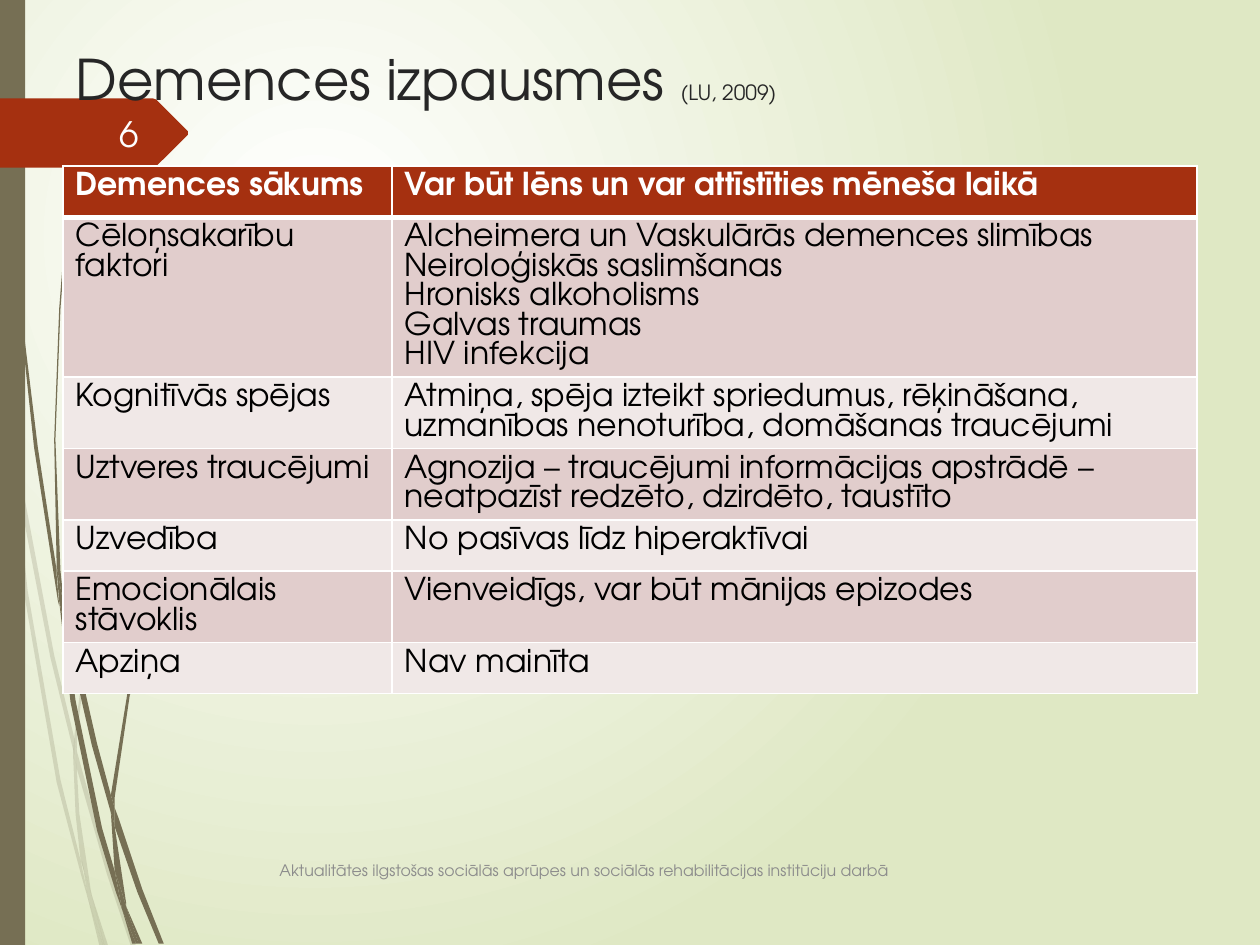
import pptx
import pptx.util
import pptx.oxml
from pptx.dml.color import RGBColor
from pptx.enum.text import MSO_ANCHOR, PP_ALIGN
from pptx.oxml.ns import qn
from lxml import etree

Pt = pptx.util.Pt
FONT = "TeX Gyre Adventor"
COLORS = {
    "white": "FFFFFF", "meadow": "DFE8C4", "olive": "766F54", "rust": "A53010",
    "title": "262626", "black": "000000", "rose": "E1CDCC", "blush": "F0E8E7",
    "footer": "8C8C8C", "number": "FEFFFF",
}
TITLE = [("Demences izpausmes ", 32), ("(LU, 2009)", 12)]
FOOTER = "Aktualitātes ilgstošas sociālās aprūpes un sociālās rehabilitācijas institūciju darbā"
ROWS = [
    ("Demences sākums", "Var būt lēns un var attīstīties mēneša laikā"),
    ("Cēloņsakarību faktori",
     "Alcheimera un Vaskulārās demences slimības\nNeiroloģiskās saslimšanas\n"
     "Hronisks alkoholisms\nGalvas traumas\nHIV infekcija"),
    ("Kognitīvās spējas",
     "Atmiņa, spēja izteikt spriedumus, rēķināšana, uzmanības nenoturība, domāšanas traucējumi"),
    ("Uztveres traucējumi",
     "Agnozija – traucējumi informācijas apstrādē – neatpazīst redzēto, dzirdēto, taustīto"),
    ("Uzvedība", "No pasīvas līdz hiperaktīvai"),
    ("Emocionālais stāvoklis", "Vienveidīgs, var būt mānijas epizodes"),
    ("Apziņa", "Nav mainīta"),
]
COLUMN_WIDTHS = [188, 460]
ROW_HEIGHT = 29.2

GRID = Pt(0.72)
PALE_GRASS = [
    [(8, 350), (6, 322), (0, 282), (0, 299), (7, 344)],
    [(40, 522), (59, 599), (59, 586), (43, 520), (10, 345), (12, 376)],
    [(64, 607), (61, 596), (61, 610), (85, 694), (104, 751), (108, 751), (88, 692)],
    [(83, 751), (86, 751), (73, 711)],
    [(64, 683), (48, 619), (22, 469), (12, 376), (8, 350), (19, 470), (45, 621),
     (64, 693), (70, 714), (69, 707)],
    [(58, 599), (60, 646), (64, 683), (67, 692), (73, 711), (72, 706), (63, 646),
     (61, 610), (61, 608)],
    [(61, 584), (76, 462), (111, 349), (159, 245), (187, 198), (201, 175), (217, 154),
     (217, 153), (201, 175), (186, 197), (158, 244), (110, 348), (75, 461), (59, 584),
     (59, 586), (61, 596)],
    [(70, 714), (79, 751), (82, 751)],
    [(61, 608), (61, 610), (61, 596), (59, 586), (58, 599)],
    [(67, 692), (65, 683), (69, 707), (70, 714), (82, 751), (83, 751), (73, 711)],
]
DARK_GRASS = [
    [(5, 110), (14, 233), (27, 355), (46, 477), (47, 481), (45, 457), (45, 453),
     (30, 355), (15, 232), (6, 109), (4, 48), (3, 0), (2, 0), (3, 48)],
    [(73, 592), (88, 645), (88, 633), (88, 631), (77, 590), (50, 472), (53, 505)],
    [(94, 649), (91, 641), (91, 656), (109, 708), (126, 749), (130, 749), (113, 706)],
    [(91, 691), (81, 657), (60, 556), (53, 505), (47, 477), (56, 557), (77, 659),
     (92, 708), (97, 722), (96, 717)],
    [(50, 472), (48, 453), (44, 349), (48, 245), (52, 193), (58, 141), (51, 193),
     (47, 245), (43, 349), (45, 449), (49, 472)],
    [(110, 749), (113, 749), (100, 719)],
    [(47, 477), (53, 505), (50, 472), (49, 472), (45, 449), (45, 453)],
    [(91, 633), (103, 552), (131, 476), (169, 406), (191, 374), (203, 359), (216, 344),
     (215, 344), (203, 358), (191, 373), (168, 405), (129, 474), (101, 551), (88, 631),
     (91, 641)],
    [(97, 722), (105, 749), (108, 749)],
    [(88, 645), (91, 691), (96, 706), (100, 719), (100, 716), (91, 656), (90, 651)],
    [(88, 645), (90, 651), (91, 656), (91, 641), (88, 631), (88, 633)],
    [(96, 706), (91, 691), (96, 717), (97, 722), (108, 749), (110, 749), (100, 719)],
]
NUMBER_TAG = [(149, 107), (124, 132), (121, 133), (0, 133), (0, 78), (121, 78),
              (124, 79), (149, 104)]


def rgb(name):
    return RGBColor.from_string(COLORS[name])


def place(shape, left, top, width, height):
    shape.left, shape.top, shape.width, shape.height = map(Pt, (left, top, width, height))


def style_text(text_frame, size, color, bold=False):
    for paragraph in text_frame.paragraphs:
        for run in paragraph.runs:
            run.font.name = FONT
            run.font.size = Pt(size)
            run.font.bold = bold
            run.font.color.rgb = rgb(color)


def paint(shape, color, opacity=100):
    shape.shadow.inherit = False
    shape.fill.solid()
    shape.fill.fore_color.rgb = rgb(color)
    shape.line.fill.background()
    if opacity < 100:
        fill_color = shape.element.spPr.find(qn("a:solidFill"))[0]
        etree.SubElement(fill_color, qn("a:alpha"), val=str(opacity * 1000))


def add_outline(shapes, points, color, opacity=100):
    builder = shapes.build_freeform(*points[0], scale=GRID)
    builder.add_line_segments(points[1:], close=True)
    paint(builder.convert_to_shape(), color, opacity)


def add_label(slide, text, box, size, color, alignment):
    label = slide.shapes.add_textbox(*map(Pt, box))
    label.text_frame.text = text
    label.text_frame.word_wrap = True
    label.text_frame.vertical_anchor = MSO_ANCHOR.MIDDLE
    label.text_frame.paragraphs[0].alignment = alignment
    style_text(label.text_frame, size, color)


def set_background(slide):
    fill = slide.background.fill
    fill.gradient()
    for stop, position, color in zip(fill.gradient_stops, (0, 1), ("white", "meadow")):
        stop.position = position
        stop.color.rgb = rgb(color)
    gradient = slide.element.find(".//" + qn("a:gradFill"))
    gradient.remove(gradient.find(qn("a:lin")))
    circle = etree.SubElement(gradient, qn("a:path"), attrib={"path": "circle"})
    etree.SubElement(circle, qn("a:fillToRect"), l="50000", t="50000", r="100000", b="100000")


def set_borders(cell, top, bottom):
    properties = cell._tc.get_or_add_tcPr()
    for side, width in (("L", 1), ("R", 1), ("T", top), ("B", bottom)):
        line = etree.SubElement(properties, qn("a:ln" + side), w=str(Pt(width)))
        fill = etree.SubElement(line, qn("a:solidFill"))
        etree.SubElement(fill, qn("a:srgbClr"), val=COLORS["white"])


def add_symptom_table(slide):
    frame = slide.shapes.add_table(
        len(ROWS), len(COLUMN_WIDTHS), Pt(36), Pt(95),
        Pt(sum(COLUMN_WIDTHS)), Pt(ROW_HEIGHT * len(ROWS)))
    table = frame.table
    for column, width in zip(table.columns, COLUMN_WIDTHS):
        column.width = Pt(width)
    for index, texts in enumerate(ROWS):
        table.rows[index].height = Pt(ROW_HEIGHT)
        header = index == 0
        background = "rust" if header else ("blush", "rose")[index % 2]
        for column, text in enumerate(texts):
            cell = table.cell(index, column)
            cell.text_frame.text = text
            style_text(cell.text_frame, 18, "white" if header else "black", header)
            set_borders(cell, 3 if index == 1 else 1, 3 if header else 1)
            cell.fill.solid()
            cell.fill.fore_color.rgb = rgb(background)


def add_title(slide):
    title = slide.shapes.title
    title.element.getparent().append(title.element)
    place(title, 36, 21.6, 648, 67)
    title.text_frame.vertical_anchor = MSO_ANCHOR.TOP
    paragraph = title.text_frame.paragraphs[0]
    paragraph.alignment = PP_ALIGN.LEFT
    for text, size in TITLE:
        run = paragraph.add_run()
        run.text = text
        run.font.name = FONT
        run.font.size = Pt(size)
        run.font.color.rgb = rgb("title")


def main():
    presentation = pptx.Presentation()
    presentation.slide_width, presentation.slide_height = Pt(720), Pt(540)
    slide = presentation.slides.add_slide(presentation.slide_layouts[5])
    set_background(slide)
    for outlines, opacity in ((PALE_GRASS, 20), (DARK_GRASS, 100)):
        group = slide.shapes.add_group_shape()
        for points in outlines:
            add_outline(group.shapes, points, "olive", opacity)
    side_bar = slide.shapes.add_shape(
        pptx.enum.shapes.MSO_SHAPE.RECTANGLE, 0, 0, Pt(14.4), Pt(540))
    paint(side_bar, "olive")
    add_outline(slide.shapes, NUMBER_TAG, "rust")
    add_title(slide)
    add_symptom_table(slide)
    add_label(slide, FOOTER, (152.6, 483, 450, 28.8), 9, "footer", PP_ALIGN.LEFT)
    add_label(slide, "6", (40.3, 62, 46, 28.8), 20, "number", PP_ALIGN.RIGHT)
    presentation.save("out.pptx")


if __name__ == "__main__":
    main()
